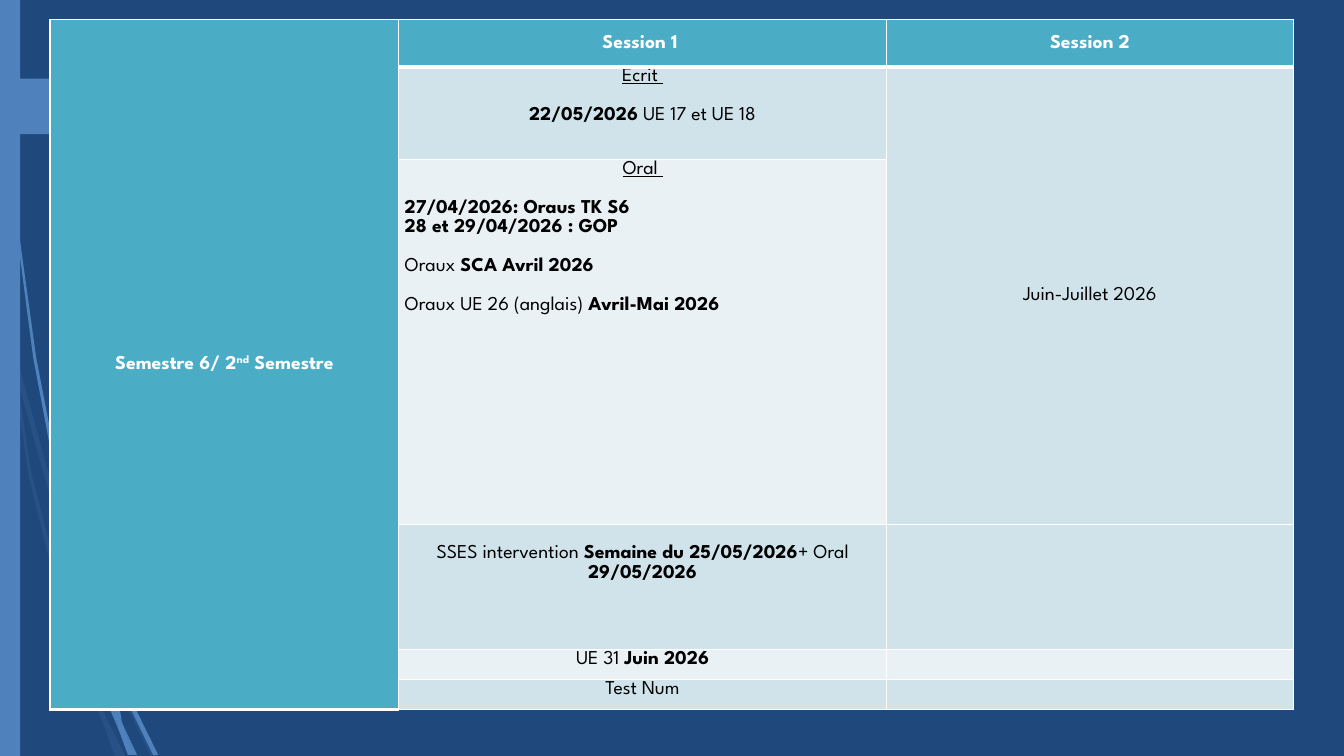
import pptx
import pptx.util
import pptx.dml.color
import pptx.enum.shapes
import pptx.enum.text
import pptx.oxml
import pptx.oxml.ns
from lxml import etree

Cm, Pt = pptx.util.Cm, pptx.util.Pt
NAVY, BLUE, DIM = "1F497D", "4F81BD", "376092"
TEAL, BAND, PALE = "4BACC6", "D0E3EA", "E9F1F5"
WHITE, BLACK = "FFFFFF", "000000"
FONT, SIZE, GAP = "League Spartan", 14, 14

# Table: *bold*, ^superscript^, _ at the start underlines, | adds a gap above
LEFT, TOP = 1.26, 0.49
COLS = [8.79, 12.29, 10.26]
ROWS = [1.19, 2.34, 9.19, 3.15, 0.76, 0.76]
FILLS = [TEAL, BAND, PALE, BAND, PALE, BAND]
SPANS = [((0, 0), (5, 0)), ((1, 2), (2, 2))]
HEADS = {
    (0, 0): "Semestre 6/ 2^nd^ Semestre",
    (0, 1): "Session 1 ",
    (0, 2): "Session 2",
}
BODY = {
    (1, 1): ["_Ecrit ", "|*22/05/2026* UE 17 et UE 18"],
    (1, 2): ["Juin-Juillet 2026"],
    (2, 1): ["_Oral ", "|*27/04/2026: Oraus TK S6*", "*28 et 29/04/2026 : GOP*",
             "|Oraux *SCA Avril 2026*", "|Oraux UE 26 (anglais) *Avril-Mai 2026*"],
    (3, 1): ["SSES intervention *Semaine du 25/05/2026*+ Oral *29/05/2026*"],
    (4, 1): ["UE 31 *Juin 2026*"],
    (5, 1): ["Test Num"],
}

# Wisps: outline points in hundredths of an inch
UNIT = Cm(0.0254)
WISPS = {
    DIM: [
        [(58, 522), (84, 599), (85, 586), (62, 520), (14, 345), (17, 376)],
        [(92, 607), (88, 596), (88, 610), (123, 694), (150, 750), (155, 750),
         (127, 692)],
        [(119, 750), (124, 750), (105, 711)],
        [(93, 683), (70, 619), (31, 469), (17, 376), (11, 350), (28, 470),
         (65, 621), (92, 693), (101, 714), (99, 707)],
        [(101, 714), (114, 750), (119, 750)],
        [(96, 692), (93, 683), (99, 707), (101, 714), (119, 750), (105, 711)],
    ],
    BLUE: [
        [(7, 110), (17, 233), (33, 355), (56, 477), (57, 481), (55, 457),
         (55, 453), (36, 355), (19, 232), (8, 109), (5, 48), (4, 0), (3, 0),
         (4, 48)],
        [(113, 649), (110, 641), (111, 656), (132, 708), (152, 749), (157, 749),
         (136, 706)],
        [(110, 691), (98, 657), (72, 556), (64, 505), (57, 477), (68, 557),
         (93, 659), (111, 708), (117, 722), (116, 717)],
        [(133, 749), (136, 749), (122, 719)],
        [(117, 722), (127, 749), (131, 749)],
        [(106, 645), (110, 691), (116, 706), (122, 719), (121, 716), (111, 656),
         (109, 651)],
        [(116, 706), (110, 691), (116, 717), (117, 722), (130, 749), (133, 749),
         (122, 719)],
    ],
}


def rgb(code):
    return pptx.dml.color.RGBColor.from_string(code)


def paint(shape, code):
    shape.shadow.inherit = False
    shape.fill.solid()
    shape.fill.fore_color.rgb = rgb(code)
    shape.line.fill.background()


def fade(shape, part):
    tag = shape.fill._xPr.find(".//" + pptx.oxml.ns.qn("a:srgbClr"))
    etree.SubElement(tag, pptx.oxml.ns.qn("a:alpha"), val=str(part * 1000))


def edge(cell, widths):
    """Draw white cell borders; the lines come before the fill."""
    props = cell._tc.get_or_add_tcPr()
    for spot, (side, width) in enumerate(widths.items()):
        props.insert(spot, pptx.oxml.parse_xml(
            f'<a:ln{side} {pptx.oxml.ns.nsdecls("a")} w="{Pt(width)}">'
            f'<a:solidFill><a:srgbClr val="{WHITE}"/></a:solidFill></a:ln{side}>'))


def style(para, color, align):
    para.alignment = align
    para.line_spacing = 1.07
    para.font.name, para.font.size = FONT, Pt(SIZE)
    para.font.color.rgb = rgb(color)


deck = pptx.Presentation()
deck.slide_width, deck.slide_height = Cm(33.87), Cm(19.05)
slide = deck.slides.add_slide(deck.slide_layouts[6])
slide.background.fill.solid()
slide.background.fill.fore_color.rgb = rgb(NAVY)
shapes = slide.shapes
kinds = pptx.enum.shapes.MSO_SHAPE
mid = pptx.enum.text.MSO_ANCHOR.MIDDLE
center = pptx.enum.text.PP_ALIGN.CENTER
left = pptx.enum.text.PP_ALIGN.LEFT

# Wisps, side bar and tag
for color, group in WISPS.items():
    for first, *rest in group:
        pen = shapes.build_freeform(*first, scale=UNIT)
        pen.add_line_segments(rest, close=True)
        wisp = pen.convert_to_shape()
        paint(wisp, color)
        if color == DIM:
            fade(wisp, 40)
bar = shapes.add_shape(kinds.RECTANGLE, 0, 0, Cm(0.51), Cm(19.05))
tag = shapes.add_shape(kinds.PENTAGON, 0, Cm(1.98), Cm(4.42), Cm(1.4))
for shape in (bar, tag):
    paint(shape, BLUE)

# Table grid
table = shapes.add_table(len(ROWS), len(COLS), Cm(LEFT), Cm(TOP),
                         Cm(sum(COLS)), Cm(sum(ROWS))).table
for col, width in zip(table.columns, COLS):
    col.width = Cm(width)
for row, height in zip(table.rows, ROWS):
    row.height = Cm(height)
for r, fill in enumerate(FILLS):
    for c in range(len(COLS)):
        cell = table.cell(r, c)
        cell.margin_left = cell.margin_right = Cm(0.15)
        cell.margin_top = cell.margin_bottom = 0
        cell.fill.solid()
        cell.fill.fore_color.rgb = rgb(fill if c else TEAL)
        thick = r == 0 or (r == 5 and c == 0)
        edge(cell, {"L": 1, "R": 1, "T": 3 if r == 1 and c else 1,
                    "B": 3 if thick else 1})
        style(cell.text_frame.paragraphs[0], BLACK, center)
for start, end in SPANS:
    table.cell(*start).merge(table.cell(*end))

# Headings
for place, text in HEADS.items():
    cell = table.cell(*place)
    cell.vertical_anchor = mid
    para = cell.text_frame.paragraphs[0]
    style(para, WHITE, center)
    for i, part in enumerate(text.split("^")):
        run = para.add_run()
        run.text = part
        run.font.bold = True
        if i % 2:
            run._r.get_or_add_rPr().set("baseline", "30000")

# Body
for place, lines in BODY.items():
    frame = table.cell(*place).text_frame
    for n, line in enumerate(lines):
        para = frame.paragraphs[0] if n == 0 else frame.add_paragraph()
        style(para, BLACK, left if place == (2, 1) and n else center)
        para.font.underline = line.startswith("_")
        if line.startswith("|"):
            para.space_before = Pt(GAP)
        for i, part in enumerate(line.lstrip("_|").split("*")):
            if part:
                run = para.add_run()
                run.text = part
                run.font.bold = bool(i % 2)
table.cell(1, 2).vertical_anchor = mid
table.cell(3, 1).margin_top = Pt(GAP)

deck.save("out.pptx")
